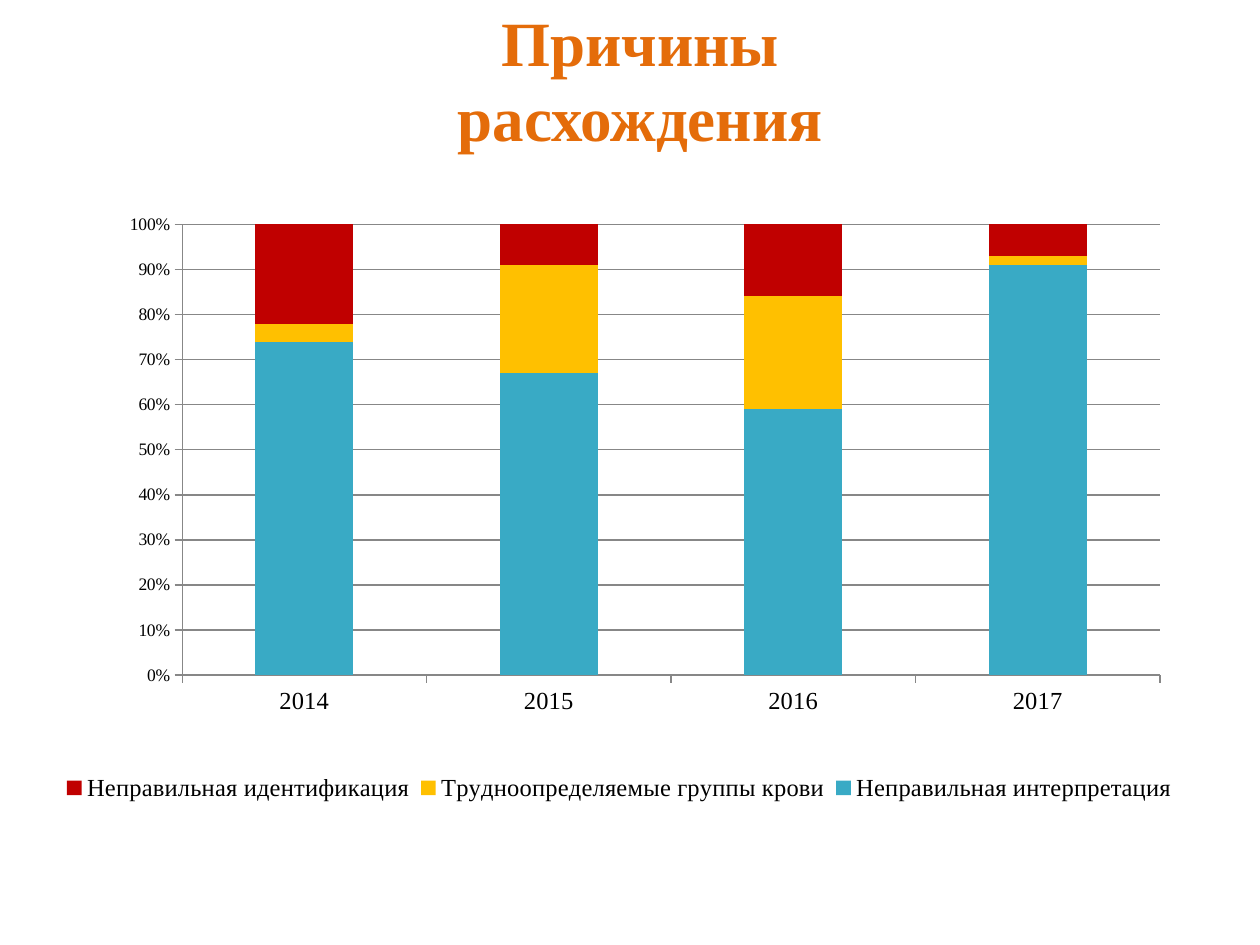
"""Build a slide with a stacked chart of the causes of discrepancy."""
import pptx
import pptx.chart.data
import pptx.dml.color
import pptx.enum.chart
import pptx.enum.text
import pptx.oxml
import pptx.oxml.ns
import pptx.util

YEARS = ["2014", "2015", "2016", "2017"]
CAUSES = [
    ("Неправильная интерпретация", [74, 67, 59, 91], "39AAC5"),
    ("Трудноопределяемые группы крови", [4, 24, 25, 2], "FFC000"),
    ("Неправильная идентификация", [22, 9, 16, 7], "C00000"),
]


def rgb(value):
    return pptx.dml.color.RGBColor.from_string(value)


def assign(target, values):
    for name, value in values.items():
        setattr(target, name, value)


def manual_layout(x, y, w, h, inner=False):
    target = '<c:layoutTarget val="inner"/>' if inner else ""
    modes = '<c:xMode val="edge"/><c:yMode val="edge"/>'
    sizes = "".join(f'<c:{key} val="{size}"/>' for key, size in zip("xywh", (x, y, w, h)))
    return pptx.oxml.parse_xml(
        f'<c:layout {pptx.oxml.ns.nsdecls("c")}><c:manualLayout>'
        f"{target}{modes}{sizes}</c:manualLayout></c:layout>"
    )


class SlideBuilder:
    font_name = "Times New Roman"
    text_color = "000000"
    line_color = "878787"

    def __init__(self, presentation):
        self.slide = presentation.slides.add_slide(presentation.slide_layouts[5])

    def style_font(self, font, size, color=text_color, bold=False):
        assign(font, {"name": self.font_name, "size": pptx.util.Pt(size), "bold": bold})
        font.color.rgb = rgb(color)

    def style_line(self, line):
        line.color.rgb = rgb(self.line_color)
        line.width = pptx.util.Pt(0.75)

    def title(self, text, box, size, color):
        heading = self.slide.shapes.title
        assign(heading, dict(zip(("left", "top", "width", "height"), map(pptx.util.Inches, box))))
        frame = heading.text_frame
        assign(frame, {
            "text": text,
            "word_wrap": True,
            "auto_size": pptx.enum.text.MSO_AUTO_SIZE.NONE,
            "vertical_anchor": pptx.enum.text.MSO_ANCHOR.MIDDLE,
        })
        paragraph = frame.paragraphs[0]
        paragraph.alignment = pptx.enum.text.PP_ALIGN.CENTER
        self.style_font(paragraph.runs[0].font, size, color, bold=True)

    def stacked_chart(self, categories, series, box, plot_box, legend_box):
        shares = pptx.chart.data.CategoryChartData()
        shares.categories = categories
        for name, values, _ in series:
            shares.add_series(name, values)
        chart = self.slide.shapes.add_chart(
            pptx.enum.chart.XL_CHART_TYPE.COLUMN_STACKED_100,
            *map(pptx.util.Inches, box), shares
        ).chart
        assign(chart, {"has_title": False, "has_legend": True})
        self.style_font(chart.font, 10)
        plot = chart.plots[0]
        assign(plot, {"gap_width": 150, "overlap": 100, "vary_by_categories": False})
        for bars, (_, _, color) in zip(plot.series, series):
            bars.format.fill.solid()
            bars.format.fill.fore_color.rgb = rgb(color)
        self.axes(chart)
        self.legend(chart, legend_box)
        area = chart.element.xpath("c:chart/c:plotArea")[0]
        for layout in area.xpath("c:layout"):
            area.remove(layout)
        area.insert(0, manual_layout(*plot_box, inner=True))

    def axes(self, chart):
        for axis, size in ((chart.category_axis, 14), (chart.value_axis, 10)):
            axis.major_tick_mark = pptx.enum.chart.XL_TICK_MARK.OUTSIDE
            self.style_font(axis.tick_labels.font, size)
            self.style_line(axis.format.line)
        shares_axis = chart.value_axis
        assign(shares_axis, {"has_major_gridlines": True, "minimum_scale": 0,
                             "maximum_scale": 1, "major_unit": 0.1})
        self.style_line(shares_axis.major_gridlines.format.line)
        assign(shares_axis.tick_labels, {"number_format": "0%", "number_format_is_linked": False})

    def legend(self, chart, box):
        assign(chart.legend, {"position": pptx.enum.chart.XL_LEGEND_POSITION.RIGHT,
                              "include_in_layout": False})
        self.style_font(chart.legend.font, 14)
        legend = chart.element.xpath("c:chart/c:legend")[0]
        for layout in legend.xpath("c:layout"):
            legend.remove(layout)
        legend.xpath("c:legendPos")[0].addnext(manual_layout(*box))


def main():
    presentation = pptx.Presentation()
    assign(presentation, {"slide_width": pptx.util.Inches(10),
                          "slide_height": pptx.util.Inches(7.5)})
    builder = SlideBuilder(presentation)
    builder.title("Причины расхождения", (2.4, 0, 5.36, 1.25), 36, "E46C0A")
    builder.stacked_chart(
        YEARS, CAUSES, (0.35, 1.39, 9.13, 5.59),
        plot_box=(0.12, 0.07, 0.85, 0.64), legend_box=(0.01, 0.83, 0.98, 0.08),
    )
    presentation.save("out.pptx")


if __name__ == "__main__":
    main()
